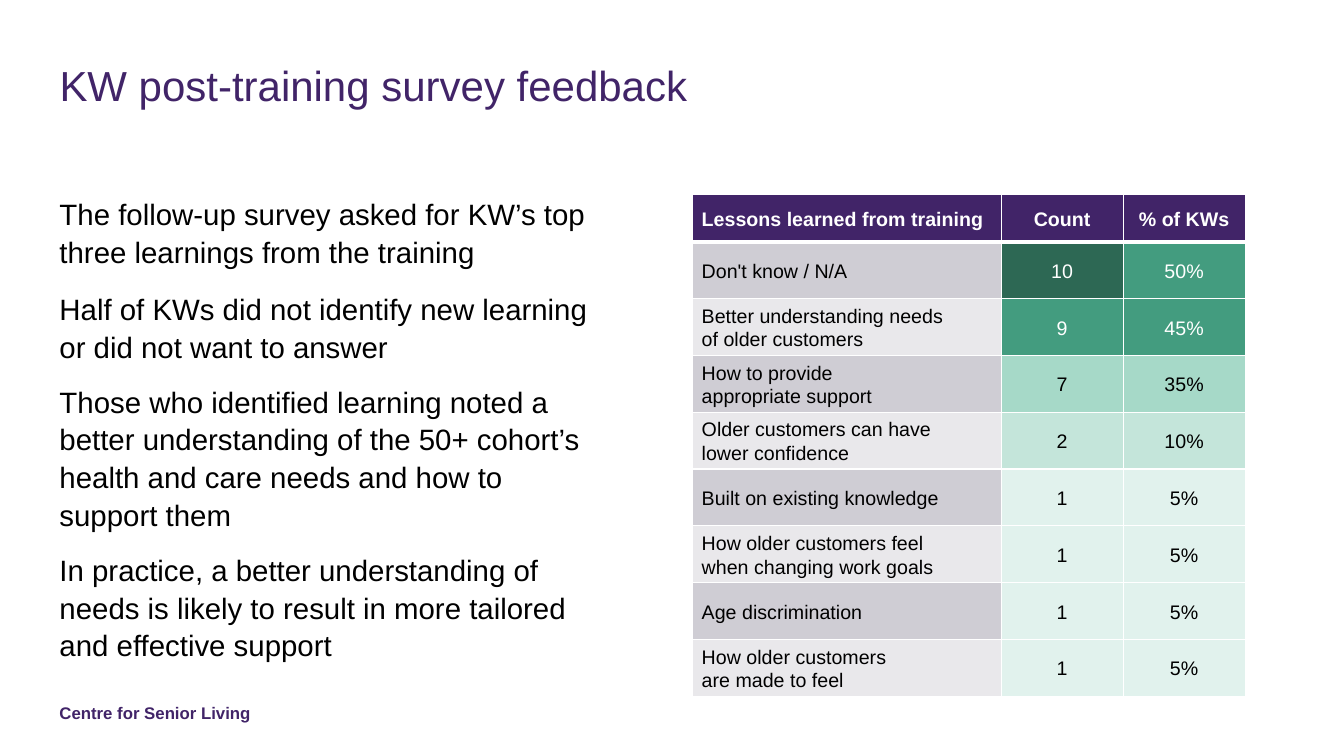
from lxml import etree
from pptx import Presentation
from pptx.dml.color import RGBColor
from pptx.enum.text import MSO_ANCHOR, PP_ALIGN
from pptx.oxml.ns import qn
from pptx.util import Inches, Pt

LEFT, CENTER = PP_ALIGN.LEFT, PP_ALIGN.CENTER
MIDDLE = MSO_ANCHOR.MIDDLE
FONT = "Arial"

PURPLE = RGBColor(0x41, 0x24, 0x68)
WHITE = RGBColor(0xFF, 0xFF, 0xFF)
BLACK = RGBColor(0x00, 0x00, 0x00)
GREY = RGBColor(0xCF, 0xCD, 0xD4)
PALE_GREY = RGBColor(0xE9, 0xE8, 0xEB)
DARK_GREEN = RGBColor(0x2D, 0x68, 0x54)
GREEN = RGBColor(0x43, 0x9C, 0x7F)
MID_GREEN = RGBColor(0xA6, 0xD9, 0xC8)
LIGHT_GREEN = RGBColor(0xC4, 0xE5, 0xDA)
PALE_GREEN = RGBColor(0xE1, 0xF2, 0xED)

TITLE = "KW post-training survey feedback"
FOOTER = "Centre for Senior Living"
FINDINGS = [
    "The follow-up survey asked for KW’s top three learnings from the training",
    "Half of KWs did not identify new learning or did not want to answer",
    "Those who identified learning noted a better understanding of the 50+ "
    "cohort’s health and care needs and how to support them",
    "In practice, a better understanding of needs is likely to result in more "
    "tailored and effective support",
]
HEADINGS = ("Lessons learned from training", "Count", "% of KWs")
# lesson, count, share, count fill, share fill
LESSONS = [
    ("Don't know / N/A", "10", "50%", DARK_GREEN, GREEN),
    ("Better understanding needs\nof older customers", "9", "45%", GREEN, GREEN),
    ("How to provide\nappropriate support", "7", "35%", MID_GREEN, MID_GREEN),
    ("Older customers can have\nlower confidence", "2", "10%", LIGHT_GREEN, LIGHT_GREEN),
    ("Built on existing knowledge", "1", "5%", PALE_GREEN, PALE_GREEN),
    ("How older customers feel\nwhen changing work goals", "1", "5%", PALE_GREEN, PALE_GREEN),
    ("Age discrimination", "1", "5%", PALE_GREEN, PALE_GREEN),
    ("How older customers\nare made to feel", "1", "5%", PALE_GREEN, PALE_GREEN),
]

MARGIN = 0.59
TABLE_LEFT, TABLE_TOP, TABLE_HEIGHT = 6.87, 1.93, 4.98
COLUMN_WIDTHS = (3.06, 1.21, 1.21)
HEADER_HEIGHT = 0.47
ROW_HEIGHT = (TABLE_HEIGHT - HEADER_HEIGHT) / len(LESSONS)


def style_text(para, size, color, bold=False):
    for span in para.runs:
        span.font.name = FONT
        span.font.size = Pt(size)
        span.font.bold = bold
        span.font.color.rgb = color


def add_text(page, area, lines, size, color, bold=False, spacing=None):
    box = page.shapes.add_textbox(*[Inches(length) for length in area])
    frame = box.text_frame
    frame.word_wrap = True
    frame.margin_left = frame.margin_right = 0
    frame.margin_top = frame.margin_bottom = 0
    frame.text = "\n".join(lines)
    for para in frame.paragraphs:
        if spacing:
            para.line_spacing = Pt(spacing)
        style_text(para, size, color, bold)
    return frame


def add_borders(cell, widths):
    """Draw white borders; widths maps each side (L, R, T, B) to points."""
    properties = cell._tc.get_or_add_tcPr()
    for side, width in widths.items():
        line = etree.SubElement(properties, qn(f"a:ln{side}"), w=str(Pt(width)))
        fill = etree.SubElement(line, qn("a:solidFill"))
        etree.SubElement(fill, qn("a:srgbClr"), val=str(WHITE))


def fill_cell(cell, text, row, column, fill):
    is_header = row == 0
    add_borders(cell, {"L": 1, "R": 1, "T": 3 if row == 1 else 1, "B": 3 if is_header else 1})
    cell.fill.solid()
    cell.fill.fore_color.rgb = fill
    cell.vertical_anchor = MIDDLE
    cell.margin_left = Inches(0.09 if column == 0 else 0.01)
    cell.margin_right = cell.margin_top = Inches(0.01)
    cell.margin_bottom = 0
    para = cell.text_frame.paragraphs[0]
    para.text = text
    para.alignment = LEFT if column == 0 else CENTER
    para.line_spacing = 1.07
    color = WHITE if fill in (PURPLE, DARK_GREEN, GREEN) else BLACK
    style_text(para, 14, color, is_header)


def add_lessons_table(page):
    table = page.shapes.add_table(
        len(LESSONS) + 1, len(HEADINGS), Inches(TABLE_LEFT), Inches(TABLE_TOP),
        Inches(sum(COLUMN_WIDTHS)), Inches(TABLE_HEIGHT)).table
    table.horz_banding = False
    for column, width in zip(table.columns, COLUMN_WIDTHS):
        column.width = Inches(width)
    for index, row in enumerate(table.rows):
        row.height = Inches(ROW_HEIGHT if index else HEADER_HEIGHT)

    for column, heading in enumerate(HEADINGS):
        fill_cell(table.cell(0, column), heading, 0, column, PURPLE)
    for row, (lesson, count, share, count_fill, share_fill) in enumerate(LESSONS, 1):
        lesson_fill = GREY if row % 2 else PALE_GREY
        entries = ((lesson, lesson_fill), (count, count_fill), (share, share_fill))
        for column, (text, fill) in enumerate(entries):
            fill_cell(table.cell(row, column), text, row, column, fill)


def main():
    deck = Presentation()
    deck.slide_width, deck.slide_height = Inches(13.33), Inches(7.5)
    page = deck.slides.add_slide(deck.slide_layouts[6])

    add_text(page, (MARGIN, 6.97, 3.56, 0.2), [FOOTER], 12, PURPLE, bold=True)
    add_text(page, (MARGIN, MARGIN, 12.15, 1.13), [TITLE], 30, PURPLE, spacing=36)
    findings = add_text(page, (MARGIN, 1.92, 5.43, 4.84), FINDINGS, 21, BLACK, spacing=27)
    for index, para in enumerate(findings.paragraphs):
        para.space_after = Pt(12 if index else 14)
    add_lessons_table(page)

    deck.save("out.pptx")


if __name__ == "__main__":
    main()
